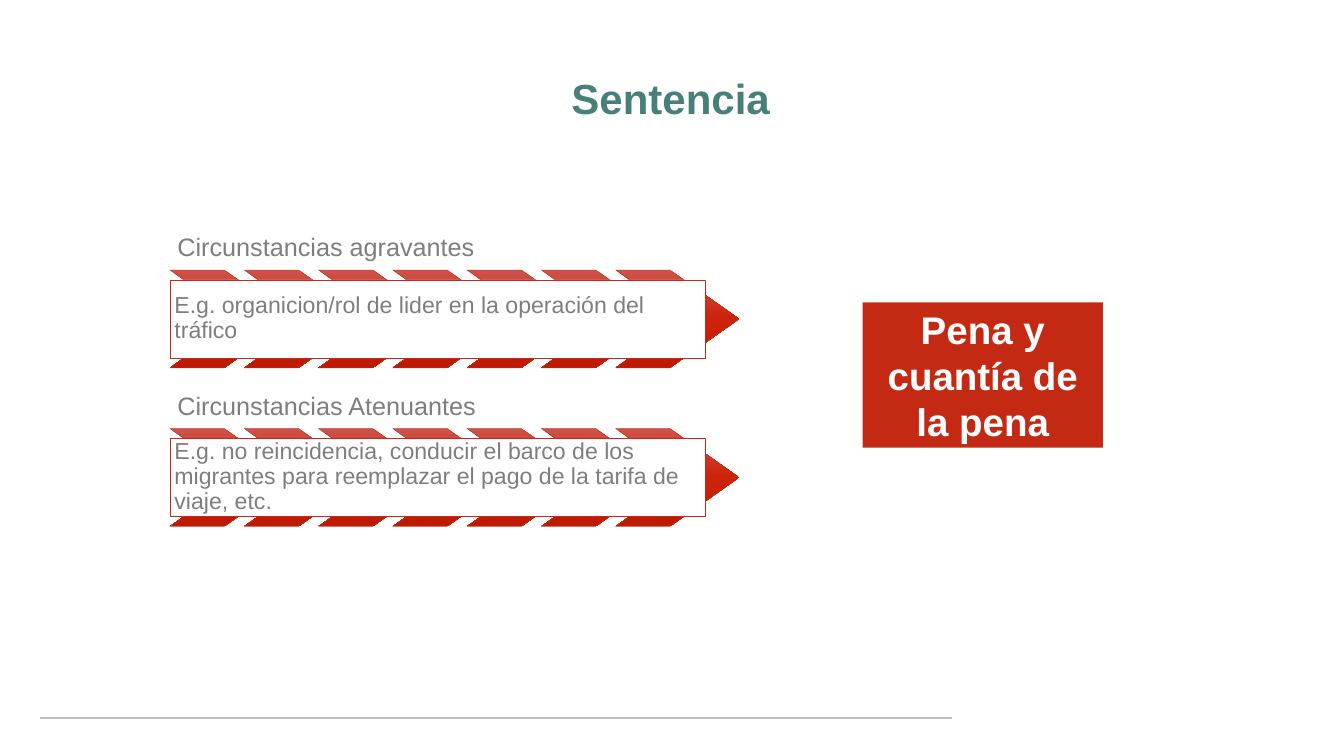
from collections import namedtuple
from copy import deepcopy
from dataclasses import dataclass

from pptx import Presentation
from pptx.dml.color import RGBColor
from pptx.enum.shapes import MSO_CONNECTOR, MSO_SHAPE
from pptx.enum.text import MSO_ANCHOR, MSO_AUTO_SIZE, PP_ALIGN
from pptx.oxml.ns import qn
from pptx.util import Inches, Pt

RECT, CHEVRON = MSO_SHAPE.RECTANGLE, MSO_SHAPE.CHEVRON
MIDDLE, BOTTOM = MSO_ANCHOR.MIDDLE, MSO_ANCHOR.BOTTOM
LEFT, CENTER = PP_ALIGN.LEFT, PP_ALIGN.CENTER
NO_FIT = MSO_AUTO_SIZE.NONE
STRAIGHT = MSO_CONNECTOR.STRAIGHT


@dataclass(frozen=True)
class Theme:
    font: str = "Arial"
    title: str = "468078"
    text: str = "7E7E7E"
    accent: str = "C42A13"
    white: str = "FFFFFF"
    rule: str = "BFBFBF"
    gradient: tuple = ("CE524C", "CD230A", "BE1A01")
    title_size: int = 60
    result_size: int = 55
    label_size: int = 36
    detail_size: int = 33


THEME = Theme()
WIDTH, HEIGHT = Inches(26.66), Inches(15)
COL, ROW = WIDTH / 100, HEIGHT / 100
CHEVRONS = 7
PITCH = 20.97
CIRCUMSTANCES = [
    ("Circunstancias agravantes",
     "E.g. organicion/rol de lider en la operación del tráfico"),
    ("Circunstancias Atenuantes",
     "E.g. no reincidencia, conducir el barco de los migrantes para "
     "reemplazar el pago de la tarifa de viaje, etc."),
]

Box = namedtuple("Box", "x y w h")


def grid(x, y, w, h):
    return Box(int(x * COL), int(y * ROW), int(w * COL), int(h * ROW))


def part(box, x, y, w, h):
    return Box(int(box.x + x * box.w), int(box.y + y * box.h),
               int(w * box.w), int(h * box.h))


def rgb(value):
    return RGBColor.from_string(value)


def write(s, text, size, color, anchor, inset, align=LEFT, bold=False, spacing=0.9):
    tf = s.text_frame
    tf.word_wrap = True
    tf.auto_size = NO_FIT
    tf.vertical_anchor = anchor
    tf.margin_left = tf.margin_right = Inches(inset[0])
    tf.margin_top = tf.margin_bottom = Inches(inset[1])
    p = tf.paragraphs[0]
    p.text = text
    p.alignment = align
    p.line_spacing = spacing
    p.font.name = THEME.font
    p.font.size = Pt(size)
    p.font.bold = bold
    p.font.color.rgb = rgb(color)


def add_block(slide, kind, box, fill=None, outline=None):
    s = slide.shapes.add_shape(kind, *box)
    s.shadow.inherit = False
    if fill:
        s.fill.solid()
        s.fill.fore_color.rgb = rgb(fill)
    if outline:
        s.line.color.rgb = rgb(outline)
        s.line.width = Pt(0.5)
    else:
        s.line.fill.background()
    return s


def shade(s):
    s.fill.gradient()
    s.fill.gradient_angle = 270
    stops = s._element.spPr.find(".//" + qn("a:gsLst"))
    stops.insert(1, deepcopy(stops[0]))
    for i, (stop, color) in enumerate(zip(s.fill.gradient_stops, THEME.gradient)):
        stop.position = i / 2
        stop.color.rgb = rgb(color)


def add_title(slide, box, text):
    s = slide.shapes.title
    s.left, s.top, s.width, s.height = box
    write(s, text, THEME.title_size, THEME.title, MIDDLE, (0.2, 0.1), CENTER, True)


def add_circumstance(slide, box, label, detail):
    s = slide.shapes.add_textbox(*part(box, 0, 0, 0.93, 0.33))
    write(s, label, THEME.label_size, THEME.text, BOTTOM, (0.15, 0.15))

    band = part(box, 0, 0.33, 1, 0.67)
    share = 0.217
    step = (1 - share) / (CHEVRONS - 1)
    for i in range(CHEVRONS):
        s = add_block(slide, CHEVRON, part(band, i * step, 0, share, 1),
                      outline=THEME.accent)
        s.adjustments[0] = 0.706
        shade(s)

    s = add_block(slide, RECT, part(band, 0, 0.1, 0.94, 0.8), THEME.white, THEME.accent)
    write(s, detail, THEME.detail_size, THEME.text, MIDDLE, (0.09, 0.09))


def add_result(slide, box, text):
    s = add_block(slide, RECT, box, THEME.accent)
    write(s, text, THEME.result_size, THEME.white, MIDDLE, (0.2, 0.1), CENTER, True, 1)


def add_footer_rule(slide, box):
    s = slide.shapes.add_connector(STRAIGHT, box.x, box.y, box.x + box.w, box.y)
    s.line.color.rgb = rgb(THEME.rule)
    s.line.width = Pt(2.25)
    s._element.spPr.append(s._element.makeelement(qn("a:effectLst"), {}))


def main():
    prs = Presentation()
    prs.slide_width, prs.slide_height = WIDTH, HEIGHT
    slide = prs.slides.add_slide(prs.slide_layouts[5])
    add_footer_rule(slide, grid(3, 95, 67.82, 0))
    add_title(slide, grid(3, 3.67, 93.81, 19.33), "Sentencia")
    for i, (label, detail) in enumerate(CIRCUMSTANCES):
        add_circumstance(slide, grid(12.64, 29.33 + i * PITCH, 42.35, 19.33),
                         label, detail)
    add_result(slide, grid(64.18, 40, 17.89, 19.2), "Pena y cuantía de la pena")
    prs.save("out.pptx")


if __name__ == "__main__":
    main()
